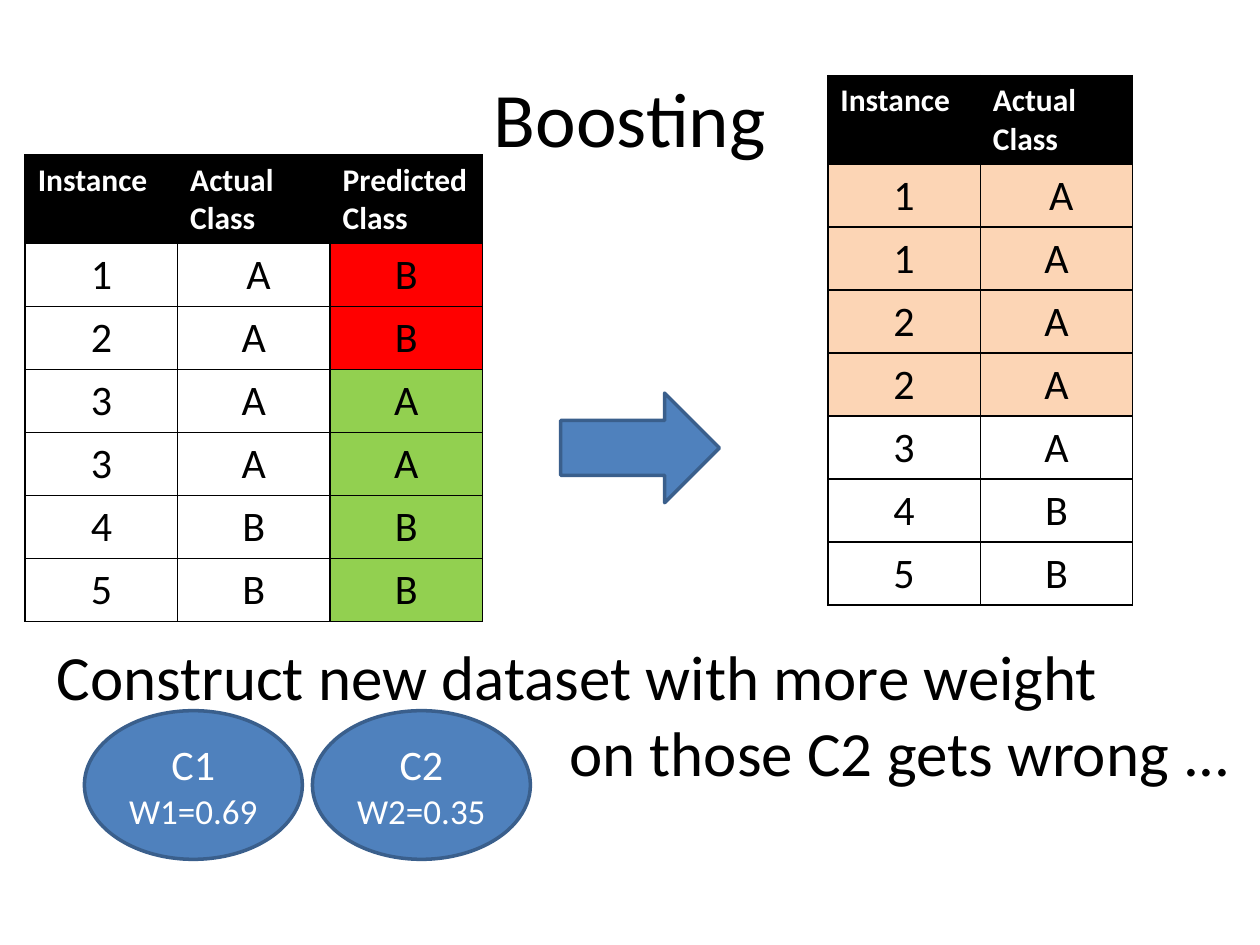
from dataclasses import dataclass

from lxml import etree
from pptx import Presentation
from pptx import util as u
from pptx.dml.color import RGBColor
from pptx.enum import shapes, text
from pptx.oxml.ns import qn

Inches = u.Inches


@dataclass(frozen=True)
class Theme:
    font: str = "Calibri"
    black: str = "000000"
    white: str = "FFFFFF"
    blue: str = "4F81BD"
    outline: str = "3A5F8C"
    wrong: str = "FF0000"
    right: str = "92D050"
    weighted: str = "FCD5B5"
    title: int = 44
    message: int = 36
    body: int = 24
    weight: int = 20
    header: int = 18


THEME = Theme()
CENTER = text.PP_ALIGN.CENTER
LEFT = text.PP_ALIGN.LEFT


def paint(fill, color):
    fill.solid()
    fill.fore_color.rgb = RGBColor.from_string(color)


def write(paragraph, words, size, color=THEME.black, align=LEFT, bold=False):
    paragraph.alignment = align
    run = paragraph.add_run()
    run.text = words
    run.font.name = THEME.font
    run.font.size = u.Pt(size)
    run.font.bold = bold
    run.font.color.rgb = RGBColor.from_string(color)


def add_text_frame(slide, left, top, width, height):
    frame = slide.shapes.add_textbox(
        Inches(left), Inches(top), Inches(width), Inches(height)).text_frame
    frame.word_wrap = True
    return frame


def add_blue_shape(slide, kind, left, top, width, height):
    shape = slide.shapes.add_shape(
        kind, Inches(left), Inches(top), Inches(width), Inches(height))
    shape.shadow.inherit = False
    paint(shape.fill, THEME.blue)
    paint(shape.line.fill, THEME.outline)
    shape.line.width = u.Pt(2)
    return shape


def add_classifier(slide, left, name, weight):
    ellipse = add_blue_shape(
        slide, shapes.MSO_SHAPE.OVAL, left, 5.64, 1.73, 1.18)
    frame = ellipse.text_frame
    frame.vertical_anchor = text.MSO_ANCHOR.MIDDLE
    write(frame.paragraphs[0], name, THEME.body, THEME.white, CENTER)
    write(frame.add_paragraph(), weight, THEME.weight, THEME.white, CENTER)


def set_borders(cell):
    properties = cell._tc.get_or_add_tcPr()
    for position, side in enumerate(("lnL", "lnR", "lnT", "lnB")):
        line = etree.Element(qn(f"a:{side}"), w=str(u.Pt(1)))
        solid = etree.SubElement(line, qn("a:solidFill"))
        etree.SubElement(solid, qn("a:srgbClr"), val=THEME.black)
        properties.insert(position, line)


def add_instances(slide, left, top, headers, rows, cell_color):
    """Add a table; cell_color gives the fill for a data row and column."""
    column, header_height, row_height = 1.21, 0.7, 0.5
    table = slide.shapes.add_table(
        len(rows) + 1, len(headers), Inches(left), Inches(top),
        Inches(column * len(headers)),
        Inches(header_height + row_height * len(rows))).table
    table.horz_banding = False
    for table_column in table.columns:
        table_column.width = Inches(column)
    for r, values in enumerate([headers, *rows]):
        table.rows[r].height = Inches(row_height if r else header_height)
        for c, value in enumerate(values):
            cell = table.cell(r, c)
            paragraph = cell.text_frame.paragraphs[0]
            if r == 0:
                paint(cell.fill, THEME.black)
                write(paragraph, value, THEME.header, THEME.white, bold=True)
            else:
                paint(cell.fill, cell_color(values, r, c))
                write(paragraph, value, THEME.body, align=CENTER)
            set_borders(cell)


def prediction_color(values, row, column):
    if column < 2:
        return THEME.white
    return THEME.right if values[1].strip() == values[2] else THEME.wrong


def weight_color(values, row, column):
    return THEME.weighted if values[0] in ("1", "2") else THEME.white


def main():
    deck = Presentation()
    deck.slide_width, deck.slide_height = Inches(10), Inches(7.5)
    slide = deck.slides.add_slide(deck.slide_layouts[6])

    # Title
    title = add_text_frame(slide, 0.5, 0.3, 9, 1.25)
    title.vertical_anchor = text.MSO_ANCHOR.MIDDLE
    write(title.paragraphs[0], "Boosting", THEME.title, align=CENTER)

    # Message, its second line indented past the classifiers
    message = add_text_frame(slide, 0.35, 5.01, 9.61, 1.31)
    write(message.paragraphs[0], "Construct new dataset with more weight",
          THEME.message)
    second_line = message.add_paragraph()
    write(second_line, "on those C2 gets wrong ...", THEME.message)
    indent = second_line._p.get_or_add_pPr()
    indent.set("marL", str(Inches(4.07)))
    indent.set("indent", "0")

    # Classifiers and their weights
    add_classifier(slide, 0.67, "C1", "W1=0.69")
    add_classifier(slide, 2.48, "C2", "W2=0.35")

    # Predictions, then the reweighted dataset
    headers = ["Instance", "Actual Class", "Predicted Class"]
    predictions = [("1", " A", "B"), ("2", "A", "B"), ("3", "A", "A"),
                   ("3", "A", "A"), ("4", "B", "B"), ("5", "B", "B")]
    add_instances(slide, 0.2, 1.23, headers, predictions, prediction_color)
    add_blue_shape(
        slide, shapes.MSO_SHAPE.RIGHT_ARROW, 4.45, 3.12, 1.26, 0.87)
    reweighted = [("1", " A"), ("1", "A"), ("2", "A"), ("2", "A"),
                  ("3", "A"), ("4", "B"), ("5", "B")]
    add_instances(slide, 6.57, 0.6, headers[:2], reweighted, weight_color)

    deck.save("out.pptx")


if __name__ == "__main__":
    main()
